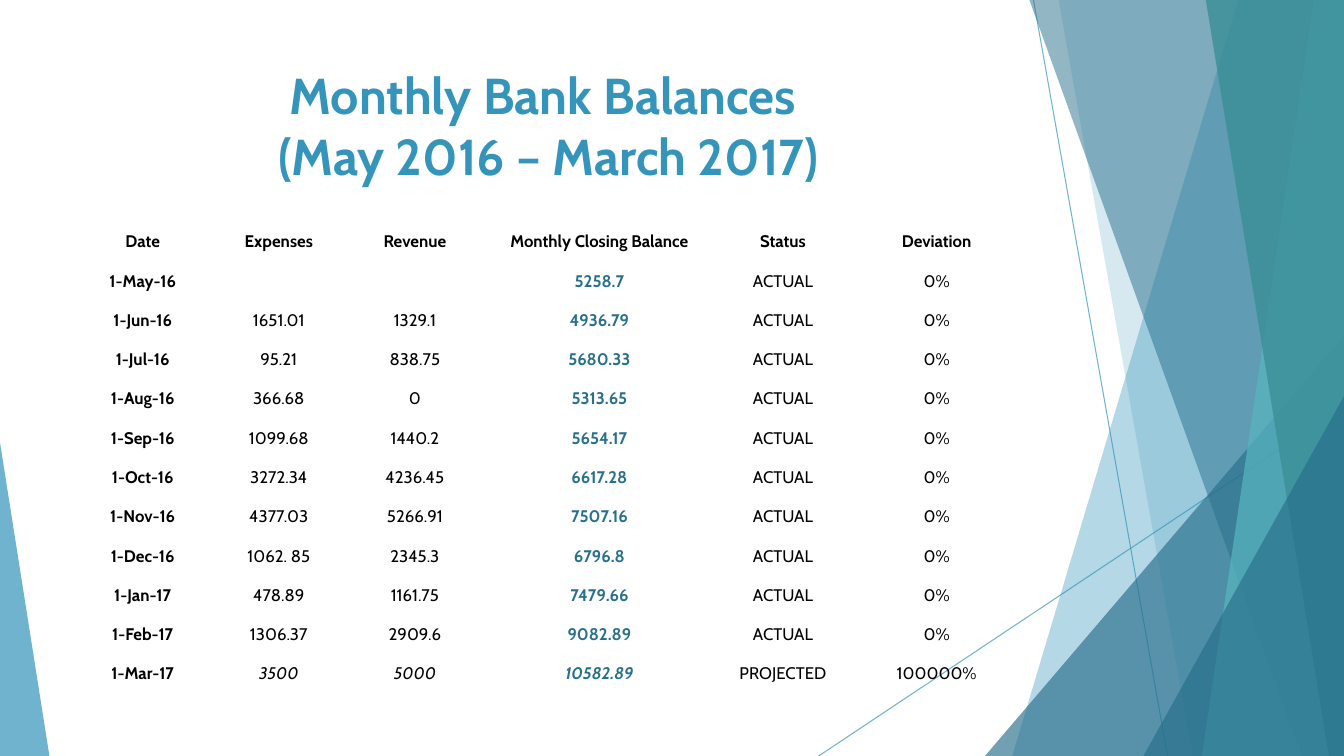
from dataclasses import astuple, dataclass

import lxml.etree
import pptx
import pptx.dml.color
import pptx.enum.shapes
import pptx.enum.text
import pptx.oxml.ns
import pptx.util

Inches = pptx.util.Inches
WIDE, HIGH = 13.33, 7.5
FONT = "Cabin"
COLORS = {"blue": "3494BA", "navy": "276F8B", "aqua": "58B6C0",
          "teal": "3A8F98", "black": "000000"}
PLAIN = "{2D5ABB26-0587-4C30-8999-92F81FD0307C}"
WIDTHS = (1.35, 1.35, 1.35, 2.31, 1.33, 1.72)
HEADS = ("Date", "Expenses", "Revenue", "Monthly Closing Balance", "Status", "Deviation")


@dataclass
class Month:
    date: str
    spent: str
    earned: str
    closing: str
    status: str = "ACTUAL"
    drift: str = "0%"


@dataclass
class Ray:
    start: tuple[float, float]
    end: tuple[float, float]


@dataclass
class Band:
    top: float
    base: float
    color: str
    alpha: int


@dataclass
class Wedge:
    left: float
    top: float
    width: float
    peak: float
    color: str
    alpha: int


MONTHS = (
    Month("1-May-16", "", "", "5258.7"),
    Month("1-Jun-16", "1651.01", "1329.1", "4936.79"),
    Month("1-Jul-16", "95.21", "838.75", "5680.33"),
    Month("1-Aug-16", "366.68", "0", "5313.65"),
    Month("1-Sep-16", "1099.68", "1440.2", "5654.17"),
    Month("1-Oct-16", "3272.34", "4236.45", "6617.28"),
    Month("1-Nov-16", "4377.03", "5266.91", "7507.16"),
    Month("1-Dec-16", "1062. 85", "2345.3", "6796.8"),
    Month("1-Jan-17", "478.89", "1161.75", "7479.66"),
    Month("1-Feb-17", "1306.37", "2909.6", "9082.89"),
    Month("1-Mar-17", "3500", "5000", "10582.89", "PROJECTED", "100000%"),
)
DECOR = (
    Ray((10.25, 0), (11.58, HIGH)),
    Ray((WIDE, 4.03), (8.12, HIGH)),
    Band(12.28, 10.04, "blue", 36),
    Band(10.5, 11.83, "blue", 20),
    Wedge(9.77, 3.33, 3.56, 1, "navy", 66),
    Band(10.21, 12.91, "navy", 50),
    Band(13.03, 11.92, "aqua", 70),
    Band(11.96, 13.18, "teal", 80),
    Wedge(11.34, 3.93, 1.99, 1, "navy", 66),
    Wedge(0, 4.39, 0.49, 0, "blue", 70),
)


def rgb(name: str) -> pptx.dml.color.RGBColor:
    return pptx.dml.color.RGBColor.from_string(COLORS[name])


def fade(shape, alpha: int) -> None:
    for tint in shape._element.spPr.iter(pptx.oxml.ns.qn("a:srgbClr")):
        lxml.etree.SubElement(tint, pptx.oxml.ns.qn("a:alpha"), val=str(alpha * 1000))


def paint(shape, color: str, alpha: int) -> None:
    shape.shadow.inherit = False
    shape.fill.solid()
    shape.fill.fore_color.rgb = rgb(color)
    shape.line.fill.background()
    fade(shape, alpha)


def draw_ray(group, ray: Ray) -> None:
    ends = [Inches(n) for n in (*ray.start, *ray.end)]
    line = group.shapes.add_connector(pptx.enum.shapes.MSO_CONNECTOR.STRAIGHT, *ends)
    line.line.color.rgb = rgb("blue")
    line.line.width = pptx.util.Pt(0.75)
    fade(line, 70)
    lxml.etree.SubElement(line._element.spPr, pptx.oxml.ns.qn("a:effectLst"))


def draw_band(group, band: Band) -> None:
    form = group.shapes.build_freeform(Inches(band.top), 0)
    form.add_line_segments([(Inches(x), Inches(y)) for x, y in
                            ((WIDE, 0), (WIDE, HIGH), (band.base, HIGH))])
    paint(form.convert_to_shape(), band.color, band.alpha)


def draw_wedge(group, wedge: Wedge) -> None:
    shape = group.shapes.add_shape(
        pptx.enum.shapes.MSO_SHAPE.ISOSCELES_TRIANGLE, Inches(wedge.left),
        Inches(wedge.top), Inches(wedge.width), Inches(HIGH - wedge.top))
    shape.adjustments[0] = wedge.peak
    paint(shape, wedge.color, wedge.alpha)


def style(part, size: int, color: str, bold: bool, slant: bool = False) -> None:
    part.alignment = pptx.enum.text.PP_ALIGN.CENTER
    for font in [part.font, *(run.font for run in part.runs)]:
        font.name, font.size = FONT, pptx.util.Pt(size)
        font.bold, font.italic = bold, slant
        font.color.rgb = rgb(color)


def add_title(slide) -> None:
    title = slide.shapes.title
    title.left, title.top = Inches(1.72), Inches(0.59)
    title.width, title.height = Inches(7.44), Inches(1.41)
    frame = title.text_frame
    frame.text = "Monthly Bank Balances \v(May 2016 – March 2017)"
    frame.vertical_anchor = pptx.enum.text.MSO_ANCHOR.TOP
    style(frame.paragraphs[0], 36, "blue", True)


def fill_cell(cell, text: str, row: int, col: int) -> None:
    cell.fill.background()
    cell.vertical_anchor = pptx.enum.text.MSO_ANCHOR.BOTTOM
    cell.margin_left = cell.margin_right = cell.margin_top = Inches(0.01)
    cell.margin_bottom = 0
    cell.text_frame.text = text
    style(cell.text_frame.paragraphs[0], 12,
          "navy" if row and col == 3 else "black",
          row == 0 or col in (0, 3),
          row == len(MONTHS) and col in (1, 2, 3))


def add_grid(slide) -> None:
    rows = [HEADS, *map(astuple, MONTHS)]
    frame = slide.shapes.add_table(len(rows), len(WIDTHS), Inches(0.74), Inches(2.11),
                                   Inches(sum(WIDTHS)), Inches(0.39 * len(rows)))
    grid = frame.table
    grid.first_row = grid.horz_banding = False
    grid._tbl.tblPr.find(pptx.oxml.ns.qn("a:tableStyleId")).text = PLAIN
    for col, width in enumerate(WIDTHS):
        grid.columns[col].width = Inches(width)
    for row, texts in enumerate(rows):
        for col, text in enumerate(texts):
            fill_cell(grid.cell(row, col), text, row, col)


def main() -> None:
    deck = pptx.Presentation()
    deck.slide_width, deck.slide_height = Inches(WIDE), Inches(HIGH)
    slide = deck.slides.add_slide(deck.slide_layouts[5])
    group = slide.shapes.add_group_shape()
    tools = {Ray: draw_ray, Band: draw_band, Wedge: draw_wedge}
    for item in DECOR:
        tools[type(item)](group, item)
    add_title(slide)
    add_grid(slide)
    deck.save("out.pptx")


if __name__ == "__main__":
    main()
